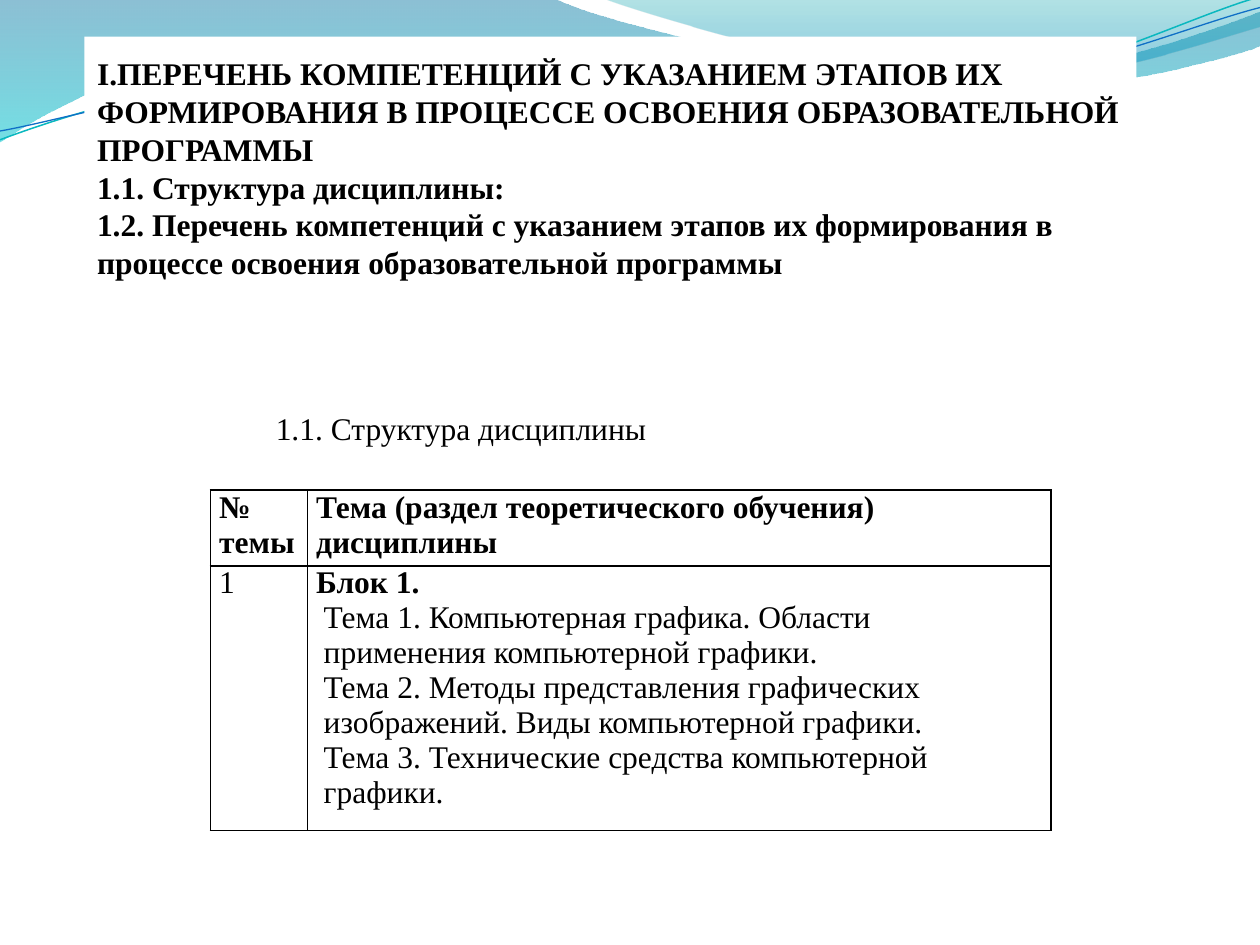
from lxml.etree import SubElement
from pptx import Presentation
from pptx.dml.color import RGBColor
from pptx.enum.text import MSO_ANCHOR, MSO_AUTO_SIZE, PP_ALIGN
from pptx.oxml.ns import qn
from pptx.util import Inches, Pt

FONT, SIZE = "Times New Roman", 18
COLORS = {"text": "000000", "paper": "FFFFFF", "teal": "0AB8BF", "blue": "0F6FC6"}

HEAD = [
    "I.ПЕРЕЧЕНЬ КОМПЕТЕНЦИЙ С УКАЗАНИЕМ ЭТАПОВ ИХ ФОРМИРОВАНИЯ В ПРОЦЕССЕ "
    "ОСВОЕНИЯ ОБРАЗОВАТЕЛЬНОЙ ПРОГРАММЫ",
    "1.1. Структура дисциплины:",
    "1.2. Перечень компетенций с указанием этапов их формирования в процессе "
    "освоения образовательной программы",
]
CAPTION = "1.1. Структура дисциплины"
# Each cell is a list of (text, bold, indent)
ROWS = [
    [[("№ темы", True, 0)],
     [("Тема (раздел теоретического обучения) дисциплины", True, 0)]],
    [[("1", False, 0)],
     [("Блок 1.", True, 0),
      ("Тема 1. Компьютерная графика. Области применения компьютерной графики.", False, 0.06),
      ("Тема 2. Методы представления графических изображений. Виды компьютерной графики.",
       False, 0.06),
      ("Тема 3. Технические средства компьютерной графики.", False, 0.06)]],
]
COLS, HEIGHTS, RIGHT = (0.77, 5.9), (0.6, 2.1), (0.07, 0.1)

# Outlines: a start point, then points (2 numbers) or Bezier curves (6 numbers)
WAVES = [
    ([(0, 0), (4.4, -0.01), (4.76, 0.17, 6.64, 0.63, 7.58, 0.63),
      (8.53, 0.63, 9.58, 0.26, 10, 0.09), (10.01, 0.36),
      (9.83, 0.44, 8.7, 0.76, 7.46, 0.75), (6.22, 0.75, 3.82, 0.28, 2.57, 0.34),
      (1.29, 0.36, 0.46, 0.83, -0.01, 1.13)],
     [(0, "0074A1", 45), (1, "00C6CF", 55)]),
    ([(4.79, -0.01), (5.09, 0.11, 6.82, 0.62, 7.69, 0.65),
      (8.56, 0.69, 9.61, 0.32, 10, 0.21), (10, 0)],
     [(0, "00A1A9", 30), (0.8, "008BBF", 45)]),
]
LINES = [
    ([(0, 1.11), (0.48, 0.93, 1.58, 0.57, 2.77, 0.52), (3.95, 0.47, 5.93, 0.89, 7.13, 0.8),
      (8.33, 0.71, 9.38, 0.15, 9.98, -0.02)], "teal", 0.85),
    ([(0, 1.04), (0.47, 0.96, 1.64, 0.61, 2.83, 0.56), (4.03, 0.51, 5.97, 0.84, 7.17, 0.75),
      (8.36, 0.67, 9.41, 0.21, 10, 0.06)], "blue", 0.75),
]


def color(name):
    return RGBColor.from_string(COLORS[name])


def draw(shapes, steps, close):
    """Draw all points as segments, then join each curve's three into one Bezier."""
    points = [(Inches(s[i]), Inches(s[i + 1])) for s in steps for i in range(0, len(s), 2)]
    pen = shapes.build_freeform(*points[0])
    pen.add_line_segments(points[1:], close=close)
    shape = pen.convert_to_shape()
    shape.shadow.inherit = False
    nodes = iter(list(shape.element.iter(qn("a:lnTo"))))
    for step in steps[1:]:
        node = next(nodes)
        if len(step) == 6:
            curve = node.makeelement(qn("a:cubicBezTo"), {})
            node.addprevious(curve)
            for old in (node, next(nodes), next(nodes)):
                curve.append(old[0])
                old.getparent().remove(old)
    return shape


def add_wave(shapes, steps, stops):
    shape = draw(shapes, steps, True)
    shape.line.fill.background()
    shape.fill.gradient()
    shape.fill.gradient_angle = 270
    for stop, (place, tint, _) in zip(shape.fill.gradient_stops, stops):
        stop.position = place
        stop.color.rgb = RGBColor.from_string(tint)
    for node, (_, _, alpha) in zip(shape.element.iter(qn("a:gs")), stops):
        SubElement(node[0], qn("a:alpha"), val=str(alpha * 1000))


def add_line(shapes, steps, name, width):
    shape = draw(shapes, steps, False)
    shape.fill.background()
    shape.line.color.rgb = color(name)
    shape.line.width = Pt(width)


def write(frame, items):
    frame.word_wrap = True
    for i, (text, bold, indent) in enumerate(items):
        para = frame.add_paragraph() if i else frame.paragraphs[0]
        para.alignment = PP_ALIGN.LEFT
        para.space_before = para.space_after = Pt(0)
        if indent:
            para._p.get_or_add_pPr().set("marL", str(Inches(indent)))
        run = para.add_run()
        run.text = text
        run.font.name, run.font.size, run.font.bold = FONT, Pt(SIZE), bold
        run.font.color.rgb = color("text")


def border(cell):
    props = cell._tc.get_or_add_tcPr()
    for i, side in enumerate(("a:lnL", "a:lnR", "a:lnT", "a:lnB")):
        line = props.makeelement(qn(side), {"w": str(Pt(1))})
        fill = SubElement(line, qn("a:solidFill"))
        SubElement(fill, qn("a:srgbClr"), val=COLORS["text"])
        props.insert(i, line)


def add_title(slide):
    title = slide.shapes.title
    title.element.getparent().append(title.element)  # in front of the waves
    title.left, title.top, title.width, title.height = map(Inches, (0.67, 0.29, 8.35, 2.87))
    title.fill.solid()
    title.fill.fore_color.rgb = color("paper")
    frame = title.text_frame
    frame.auto_size = MSO_AUTO_SIZE.NONE
    frame.vertical_anchor = MSO_ANCHOR.TOP
    frame.margin_top, frame.margin_bottom = Inches(0.14), 0
    write(frame, [(text, True, 0) for text in HEAD])


def add_topics(shapes):
    place = map(Inches, (1.67, 3.89, sum(COLS), sum(HEIGHTS)))
    table = shapes.add_table(len(ROWS), len(COLS), *place).table
    table.first_row = table.horz_banding = False
    for col, width in zip(table.columns, COLS):
        col.width = Inches(width)
    for r, row in enumerate(ROWS):
        table.rows[r].height = Inches(HEIGHTS[r])
        for c, items in enumerate(row):
            cell = table.cell(r, c)
            cell.margin_left, cell.margin_right = Inches(0.07), Inches(RIGHT[c])
            cell.margin_top = cell.margin_bottom = 0
            cell.fill.background()
            border(cell)
            write(cell.text_frame, items)


def main():
    deck = Presentation()
    deck.slide_width, deck.slide_height = Inches(10), Inches(7.5)
    slide = deck.slides.add_slide(deck.slide_layouts[5])
    for wave in WAVES:
        add_wave(slide.shapes, *wave)
    for line in LINES:
        add_line(slide.shapes, *line)
    add_title(slide)
    add_topics(slide.shapes)
    box = slide.shapes.add_textbox(*map(Inches, (2.09, 3.2, 6.85, 0.4)))
    write(box.text_frame, [(CAPTION, False, 0)])
    deck.save("out.pptx")


if __name__ == "__main__":
    main()
